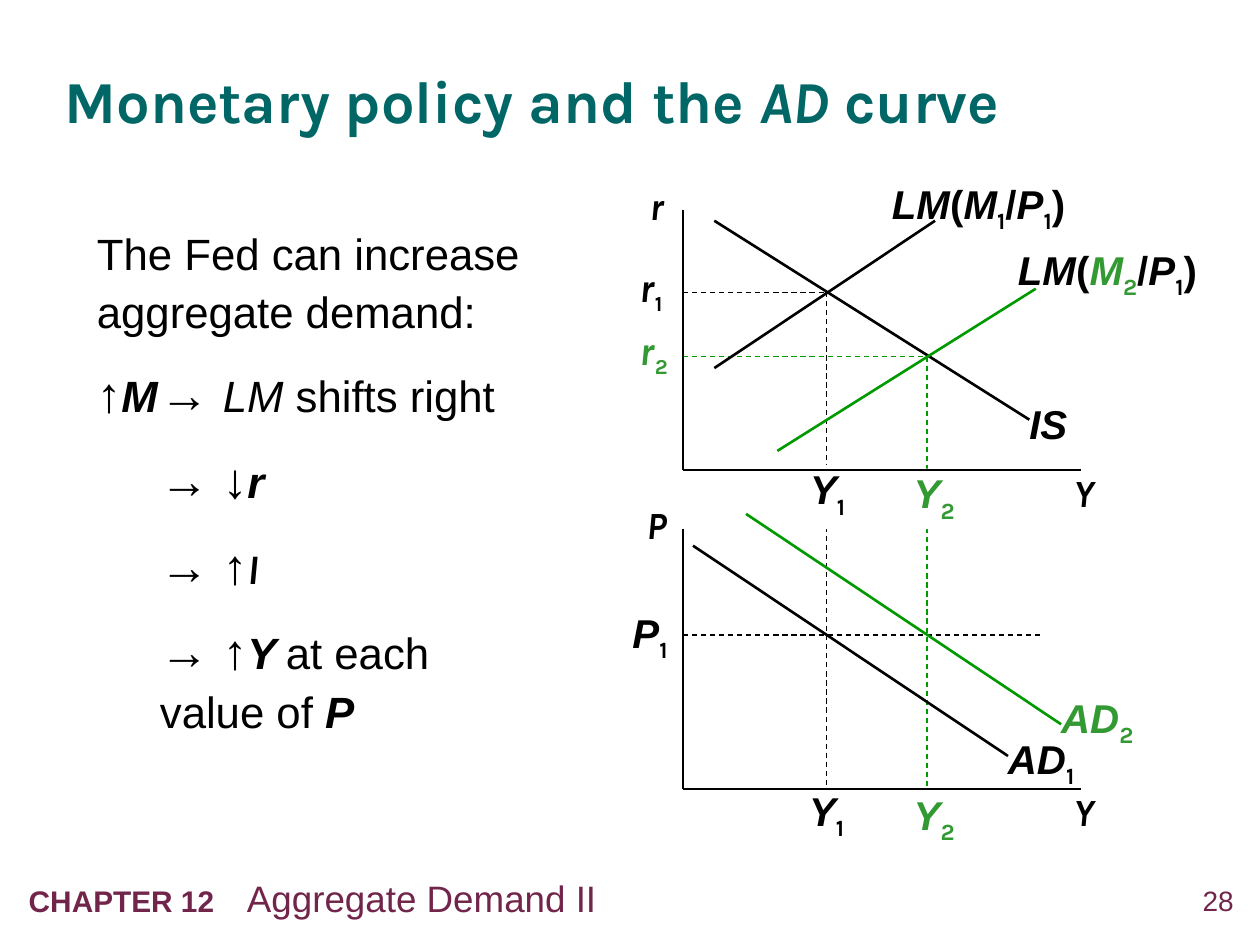
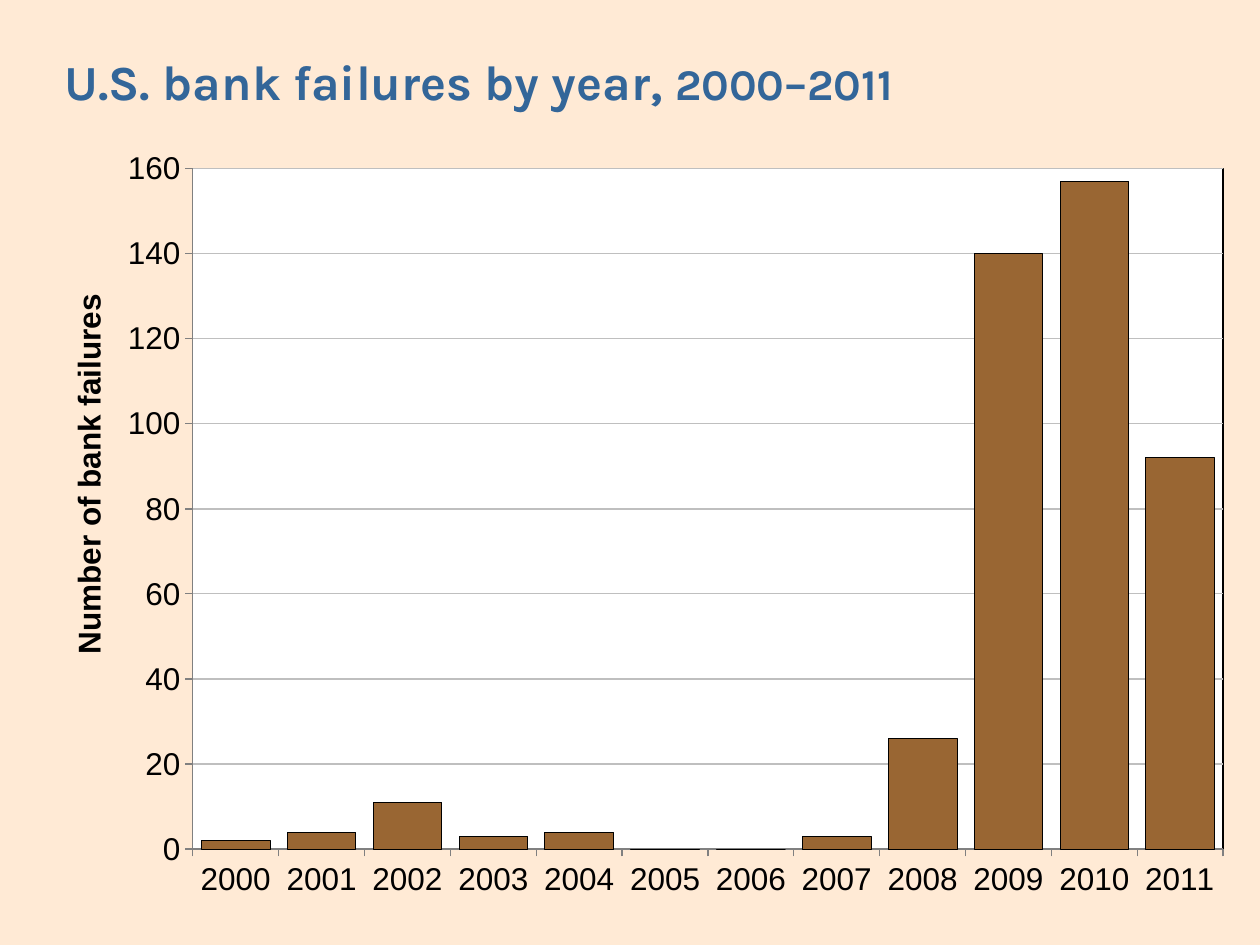
from lxml import etree
from pptx import Presentation
from pptx.chart.data import CategoryChartData
from pptx.dml.color import RGBColor
from pptx.enum.chart import XL_CHART_TYPE, XL_TICK_MARK
from pptx.enum.dml import MSO_LINE
from pptx.enum.shapes import MSO_CONNECTOR
from pptx.enum.text import MSO_ANCHOR, MSO_AUTO_SIZE, PP_ALIGN
from pptx.oxml import parse_xml
from pptx.oxml.ns import nsdecls, qn
from pptx.util import Cm, Pt

COLUMN = XL_CHART_TYPE.COLUMN_CLUSTERED
TICK_OUTSIDE = XL_TICK_MARK.OUTSIDE
TICK_NONE = XL_TICK_MARK.NONE
DASH = MSO_LINE.DASH
STRAIGHT = MSO_CONNECTOR.STRAIGHT
MIDDLE, TOP = MSO_ANCHOR.MIDDLE, MSO_ANCHOR.TOP
NO_AUTOFIT = MSO_AUTO_SIZE.NONE
LEFT, CENTER, RIGHT = PP_ALIGN.LEFT, PP_ALIGN.CENTER, PP_ALIGN.RIGHT

BODY_FONT, TITLE_FONT = "Arial", "Karla"
BLACK, WHITE = "000000", "FFFFFF"
LINE_GREEN, TEXT_GREEN = "009900", "339933"
FOOTER_PLUM = "71254B"
GRID_GREY, AXIS_GREY = "BFBFBF", "808080"


def color(hex_value):
    return RGBColor.from_string(hex_value)


def add_run(paragraph, text, size, font_name, hex_value, bold=False, italic=False, subscript=False):
    run = paragraph.add_run()
    run.text = text
    run.font.size = Pt(size)
    run.font.name = font_name
    run.font.bold = bold
    run.font.italic = italic
    run.font.color.rgb = color(hex_value)
    if subscript:
        run._r.get_or_add_rPr().set("baseline", "-25000")


presentation = Presentation()
presentation.slide_width = Cm(25.4)
presentation.slide_height = Cm(19.05)

slide_designs = [
    (1, WHITE, "006666", 2.62, [("Monetary policy and the ", 34, False), ("AD", 34, True), (" curve", 34, False)]),
    (5, "FFEAD5", "336699", 1.88, [("U.S. bank failures by year, ", 28, False), ("2000–2011", 25, False)]),
]
slides = []
for layout_index, background, title_color, title_height, title_runs in slide_designs:
    slide = presentation.slides.add_slide(presentation.slide_layouts[layout_index])
    slide.background.fill.solid()
    slide.background.fill.fore_color.rgb = color(background)
    title = slide.shapes.title
    title.left, title.top, title.width, title.height = Cm(1.3), Cm(0.66), Cm(22.91), Cm(title_height)
    frame = title.text_frame
    frame.auto_size = NO_AUTOFIT
    frame.vertical_anchor = MIDDLE
    frame.margin_left = frame.margin_right = frame.margin_top = frame.margin_bottom = 0
    paragraph = frame.paragraphs[0]
    paragraph.alignment = LEFT
    paragraph.line_spacing = 1.05
    for text, size, italic in title_runs:
        add_run(paragraph, text, size, TITLE_FONT, title_color, bold=True, italic=italic)
    slides.append(slide)
policy_slide, failures_slide = slides

body = policy_slide.placeholders[1]
body.left, body.top, body.width, body.height = Cm(1.7), Cm(4.34), Cm(10.5), Cm(10.5)
body_frame = body.text_frame
body_frame.auto_size = NO_AUTOFIT
body_frame.vertical_anchor = TOP
steps = [
    ([], [("The Fed can increase aggregate demand:", 25, "")]),
    ([1.8, 3.18], [("↑", 28, ""), ("M", 25, "bi"), ("\t", 25, ""), ("→", 28, ""), ("\t", 25, ""),
                   ("LM", 25, "i"), (" shifts right", 25, "")]),
    ([1.88, 3.35], [("\t", 25, ""), ("→", 28, ""), ("\t", 25, ""), ("↓", 28, ""), ("r", 25, "bi")]),
    ([1.88, 3.35], [("\t", 25, ""), ("→", 28, ""), ("\t", 25, ""), ("↑", 28, ""), ("I", 24, "bi")]),
    ([1.88, 3.35, 4.9], [("\t", 25, ""), ("→", 28, ""), ("\t", 25, ""), ("↑", 28, ""), ("Y", 25, "bi"),
                         ("\tat each", 25, ""), ("\n", 25, ""), ("\tvalue of ", 25, ""), ("P", 25, "bi")]),
]
for index, (tab_stops, runs) in enumerate(steps):
    paragraph = body_frame.add_paragraph() if index else body_frame.paragraphs[0]
    paragraph.alignment = LEFT
    paragraph.line_spacing = 1.1
    paragraph.space_before = Pt(12 if index else 0)
    properties = paragraph._p.get_or_add_pPr()
    properties.set("marL", "0")
    properties.set("indent", "0")
    etree.SubElement(properties, qn("a:buNone"))
    tab_list = etree.SubElement(properties, qn("a:tabLst"))
    for stop in tab_stops:
        etree.SubElement(tab_list, qn("a:tab"), pos=str(Cm(stop)), algn="l")
    for text, size, style in runs:
        if text == "\n":
            paragraph.add_line_break()
        else:
            font_name = TITLE_FONT if text == "I" else BODY_FONT
            add_run(paragraph, text, size, font_name, BLACK, "b" in style, "i" in style)

axis_x, axis_end = 13.77, 21.79
axis_height = 5.23
upper_base, lower_base = 9.47, 15.9
first_output, second_output = 16.66, 18.69
first_rate, second_rate = 5.89, 7.19
price_level = 12.8

guides = [
    (axis_x, price_level, 20.96, price_level, BLACK, 0.75),
    (first_output, first_rate, first_output, lower_base, BLACK, 0.75),
    (second_output, second_rate, second_output, lower_base, LINE_GREEN, 0.75),
    (axis_x, first_rate, first_output, first_rate, BLACK, 0.75),
    (axis_x, second_rate, second_output, second_rate, LINE_GREEN, 0.75),
]
curves = [
    (14.4, 4.45, 20.75, 8.46, BLACK, 1.5),
    (15.67, 9.09, 20.88, 5.82, LINE_GREEN, 1.5),
    (14.4, 7.42, 18.85, 4.45, BLACK, 1.5),
    (13.97, 11, 20.32, 15.24, BLACK, 1.5),
    (15.04, 10.36, 21.39, 14.6, LINE_GREEN, 1.5),
]
axes = []
for base in (upper_base, lower_base):
    axes.append((axis_x, base - axis_height, axis_x, base, BLACK, 1))
    axes.append((axis_x, base, axis_end, base, BLACK, 1))

curve_labels = [
    (20.52, 4.95, 4.01, 0.97, True, BLACK, ["LM", "(", "M", "2", "/", "P", "1", ")"]),
    (17.98, 3.61, 4.65, 0.97, False, BLACK, ["LM", "(", "M", "1", "/", "P", "1", ")"]),
    (20.75, 8.05, 1, 0.97, False, BLACK, ["IS"]),
    (20.32, 14.81, 1.9, 1.22, False, BLACK, ["AD", "1"]),
    (21.39, 13.97, 1.9, 1.22, False, TEXT_GREEN, ["AD", "2"]),
    (12.75, 12.27, 1.07, 1.22, False, BLACK, ["P", "1"]),
    (16.33, 9.37, 1.07, 1.3, True, BLACK, ["Y", "1"]),
    (16.31, 15.85, 1.07, 0.97, False, BLACK, ["Y", "1"]),
    (18.42, 9.45, 1.07, 1.22, True, TEXT_GREEN, ["Y", "2"]),
    (18.42, 15.93, 1.07, 1.22, False, TEXT_GREEN, ["Y", "2"]),
    (12.9, 5.28, 1.07, 0.97, False, BLACK, ["r", "1"]),
    (12.9, 6.55, 1.07, 0.97, False, TEXT_GREEN, ["r", "2"]),
]
axis_labels = [
    (21.64, 9.45, 1.07, 0.97, False, BLACK, ["Y"]),
    (21.64, 15.88, 1.07, 0.97, False, BLACK, ["Y"]),
    (12.7, 3.68, 1.07, 0.97, False, BLACK, ["r"]),
    (12.7, 10.11, 1.07, 0.97, False, BLACK, ["P"]),
]

for drawing_step in ("guides", "labels", "curves"):
    if drawing_step == "labels":
        for label in curve_labels + axis_labels:
            left, top, width, height, filled, label_color, parts = label
            shape = policy_slide.shapes.add_textbox(Cm(left), Cm(top), Cm(width), Cm(height))
            if filled:
                shape.fill.solid()
                shape.fill.fore_color.rgb = color(WHITE)
            frame = shape.text_frame
            frame.word_wrap = True
            frame.margin_left = frame.margin_right = frame.margin_top = frame.margin_bottom = 0
            paragraph = frame.paragraphs[0]
            on_axis = label in axis_labels
            paragraph.alignment = CENTER if on_axis and parts != ["Y"] else LEFT
            letter_font = TITLE_FONT if on_axis or parts[0] == "r" else BODY_FONT
            for position, part in enumerate(parts):
                subscript = part.isdigit()
                size = 22 if on_axis else 21 if subscript and parts[0] == "r" else 23
                shifted_money = "(" in parts and "2" in parts and position in (2, 3)
                add_run(paragraph, part, size, TITLE_FONT if subscript else letter_font,
                        TEXT_GREEN if shifted_money else label_color, True, part.isalpha(), subscript)
        continue
    for x1, y1, x2, y2, line_color, width in guides if drawing_step == "guides" else curves + axes:
        connector = policy_slide.shapes.add_connector(STRAIGHT, Cm(x1), Cm(y1), Cm(x2), Cm(y2))
        connector.line.color.rgb = color(line_color)
        connector.line.width = Pt(width)
        if drawing_step == "guides":
            connector.line.dash_style = DASH
        etree.SubElement(connector._element.spPr, qn("a:effectLst"))

footers = [
    (0.58, 17.65, 20.3, LEFT, [("CHAPTER 12", 17, True), ("\tAggregate Demand II", 21, False)]),
    (23.47, 17.81, 1.4, RIGHT, [("28", 16, False)]),
]
for left, top, width, alignment, runs in footers:
    footer = policy_slide.shapes.add_textbox(Cm(left), Cm(top), Cm(width), Cm(0.9))
    frame = footer.text_frame
    frame.word_wrap = True
    frame.margin_left = frame.margin_right = frame.margin_top = frame.margin_bottom = 0
    paragraph = frame.paragraphs[0]
    paragraph.alignment = alignment
    tab_list = etree.SubElement(paragraph._p.get_or_add_pPr(), qn("a:tabLst"))
    etree.SubElement(tab_list, qn("a:tab"), pos=str(Cm(4.4)), algn="l")
    for text, size, bold in runs:
        add_run(paragraph, text, size, BODY_FONT, FOOTER_PLUM, bold)

chart_data = CategoryChartData()
chart_data.categories = [str(year) for year in range(2000, 2012)]
chart_data.add_series("Series 1", [2, 4, 11, 3, 4, 0, 0, 3, 26, 140, 157, 92])
chart = failures_slide.shapes.add_chart(COLUMN, Cm(-0.15), Cm(2.95), Cm(25.55), Cm(16.1), chart_data).chart
chart.has_legend = False
chart.has_title = False
chart.font.size = Pt(18)
chart.font.name = BODY_FONT
chart.font.color.rgb = color(BLACK)

plot = chart.plots[0]
plot.gap_width = 25
plot.vary_by_categories = False
bars = plot.series[0].format
bars.fill.solid()
bars.fill.fore_color.rgb = color("996633")
bars.line.color.rgb = color(BLACK)
bars.line.width = Pt(0.5)

value_axis = chart.value_axis
value_axis.minimum_scale, value_axis.maximum_scale, value_axis.major_unit = 0, 160, 20
value_axis.has_major_gridlines = True
value_axis.major_gridlines.format.line.color.rgb = color(GRID_GREY)
value_axis.major_gridlines.format.line.width = Pt(0.75)
for axis in (chart.category_axis, value_axis):
    axis.major_tick_mark = TICK_OUTSIDE
    axis.minor_tick_mark = TICK_NONE
    axis.format.line.color.rgb = color(AXIS_GREY)
    axis.format.line.width = Pt(0.75)

axis_title = value_axis.axis_title
add_run(axis_title.text_frame.paragraphs[0], "Number of bank failures", 18, BODY_FONT, BLACK, bold=True)
axis_title.text_frame._txBody.find(qn("a:bodyPr")).set("rot", "-5400000")

plot_area = chart._chartSpace.chart.plotArea
placements = [
    (plot_area, 0, [("layoutTarget", "inner"), ("xMode", "edge"), ("yMode", "edge"),
                    ("x", "0.158"), ("y", "0.028"), ("w", "0.813"), ("h", "0.852")]),
    (axis_title._element, 1, [("xMode", "edge"), ("yMode", "edge"), ("x", "0.055"), ("y", "0.178")]),
]
for parent, position, settings in placements:
    for previous in parent.findall(qn("c:layout")):
        parent.remove(previous)
    layout = parse_xml(f"<c:layout {nsdecls('c')}><c:manualLayout/></c:layout>")
    for name, value in settings:
        etree.SubElement(layout[0], qn(f"c:{name}"), val=value)
    parent.insert(position, layout)
plot_area.append(parse_xml(
    f"<c:spPr {nsdecls('c', 'a')}><a:solidFill><a:srgbClr val='{WHITE}'/></a:solidFill>"
    f"<a:ln w='9525'><a:solidFill><a:srgbClr val='{BLACK}'/></a:solidFill></a:ln></c:spPr>"))

presentation.save("out.pptx")
